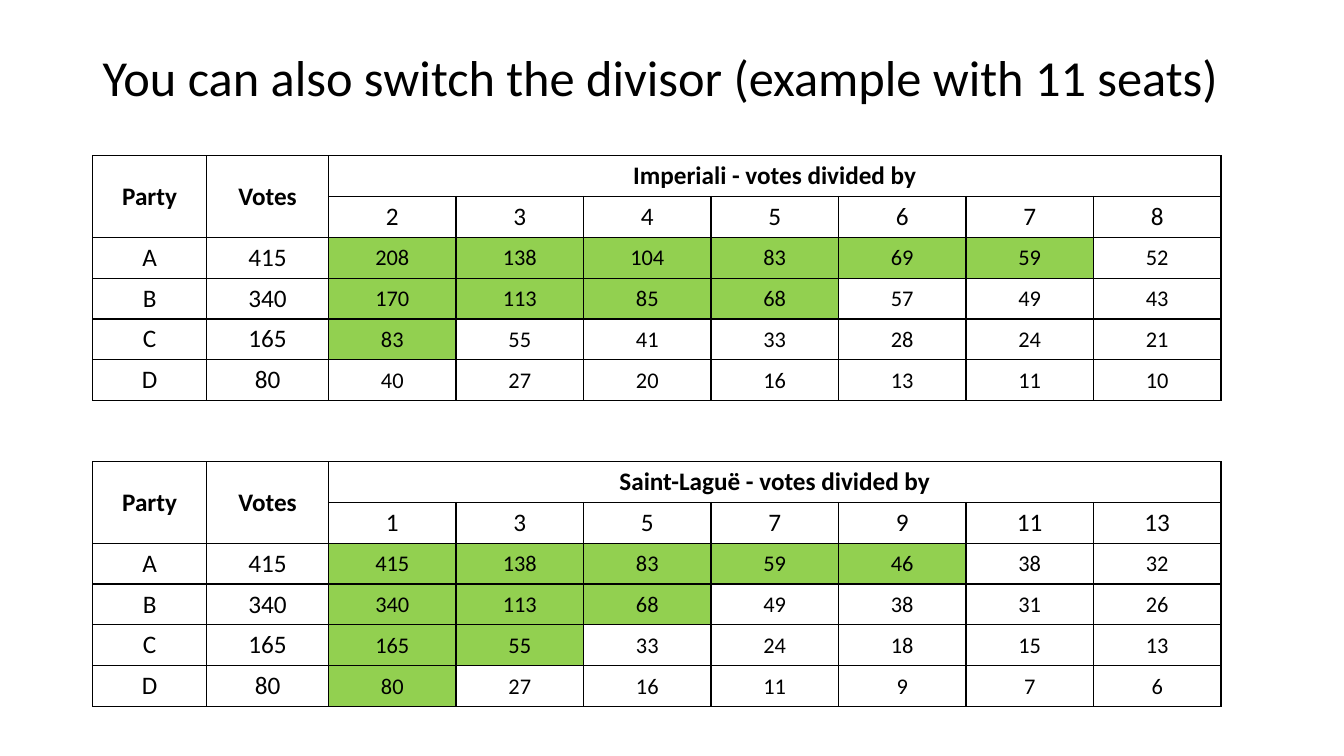
from lxml import etree
from pptx import Presentation
from pptx.dml.color import RGBColor
from pptx.enum.text import MSO_ANCHOR, PP_ALIGN
from pptx.oxml.ns import qn
from pptx.util import Pt

MIDDLE = MSO_ANCHOR.MIDDLE
CENTER = PP_ALIGN.CENTER
PX = 4572  # 200 px to the inch
FONT = "Calibri"
BLACK = "000000"
SEAT_GREEN = "92D050"

LEFT = 184
ROW_HEIGHT = 81
COLUMN_WIDTHS = [226, 242] + [253] * 7
VOTES = {"A": 415, "B": 340, "C": 165, "D": 80}

# Method, table top, divisors, seats won by each party
METHODS = [
    ("Saint-Laguë", 916, [1, 3, 5, 7, 9, 11, 13], [5, 3, 2, 1]),
    ("Imperiali", 309, [2, 3, 4, 5, 6, 7, 8], [6, 4, 1, 0]),
]


def color(hex_string):
    return RGBColor.from_string(hex_string)


def write(frame, text, size, bold=False):
    frame.text = text
    para = frame.paragraphs[0]
    font = para.runs[0].font
    font.name, font.size, font.bold = FONT, Pt(size), bold
    font.color.rgb = color(BLACK)
    return para


deck = Presentation()
deck.slide_width, deck.slide_height = 2667 * PX, 1500 * PX
page = deck.slides.add_slide(deck.slide_layouts[6])

# Title
box = page.shapes.add_textbox(LEFT * PX, 14 * PX, 2378 * PX, 290 * PX)
box.text_frame.word_wrap = True
box.text_frame.vertical_anchor = MIDDLE
title = write(box.text_frame, "You can also switch the divisor (example with 11 seats)", 36)
title.line_spacing = 0.9

# One table for each divisor method
for method, top, divisors, seats in METHODS:
    rows = [["Party", "Votes", f"{method} - votes divided by"] + [""] * 6,
            ["", ""] + divisors]
    for party, votes in VOTES.items():
        rows.append([party, votes] + [int(votes / divisor + 0.5) for divisor in divisors])

    frame = page.shapes.add_table(len(rows), len(COLUMN_WIDTHS), LEFT * PX, top * PX,
                                  sum(COLUMN_WIDTHS) * PX, len(rows) * ROW_HEIGHT * PX)
    table = frame.table
    table.first_row = table.horz_banding = False
    for column, width in zip(table.columns, COLUMN_WIDTHS):
        column.width = width * PX
    for row in table.rows:
        row.height = ROW_HEIGHT * PX

    # Merged headings
    table.cell(0, 0).merge(table.cell(1, 0))
    table.cell(0, 1).merge(table.cell(1, 1))
    table.cell(0, 2).merge(table.cell(0, 8))

    for r, values in enumerate(rows):
        for c, value in enumerate(values):
            cell = table.cell(r, c)
            is_quotient = r >= 2 and c >= 2

            # Text
            cell.vertical_anchor = MIDDLE
            if is_quotient:
                cell.margin_left = cell.margin_right = cell.margin_top = 2 * PX
                cell.margin_bottom = 0
            if value != "":
                para = write(cell.text_frame, str(value), 16 if is_quotient else 18, r == 0)
                para.alignment = CENTER

            # Thin black borders
            properties = cell._tc.get_or_add_tcPr()
            for side in ("a:lnL", "a:lnR", "a:lnT", "a:lnB"):
                line = etree.SubElement(properties, qn(side), w=str(Pt(1)))
                fill = etree.SubElement(line, qn("a:solidFill"))
                etree.SubElement(fill, qn("a:srgbClr"), val=BLACK)

            # Green marks a quotient that wins a seat
            if is_quotient and c - 2 < seats[r - 2]:
                cell.fill.solid()
                cell.fill.fore_color.rgb = color(SEAT_GREEN)
            else:
                cell.fill.background()

deck.save("out.pptx")
